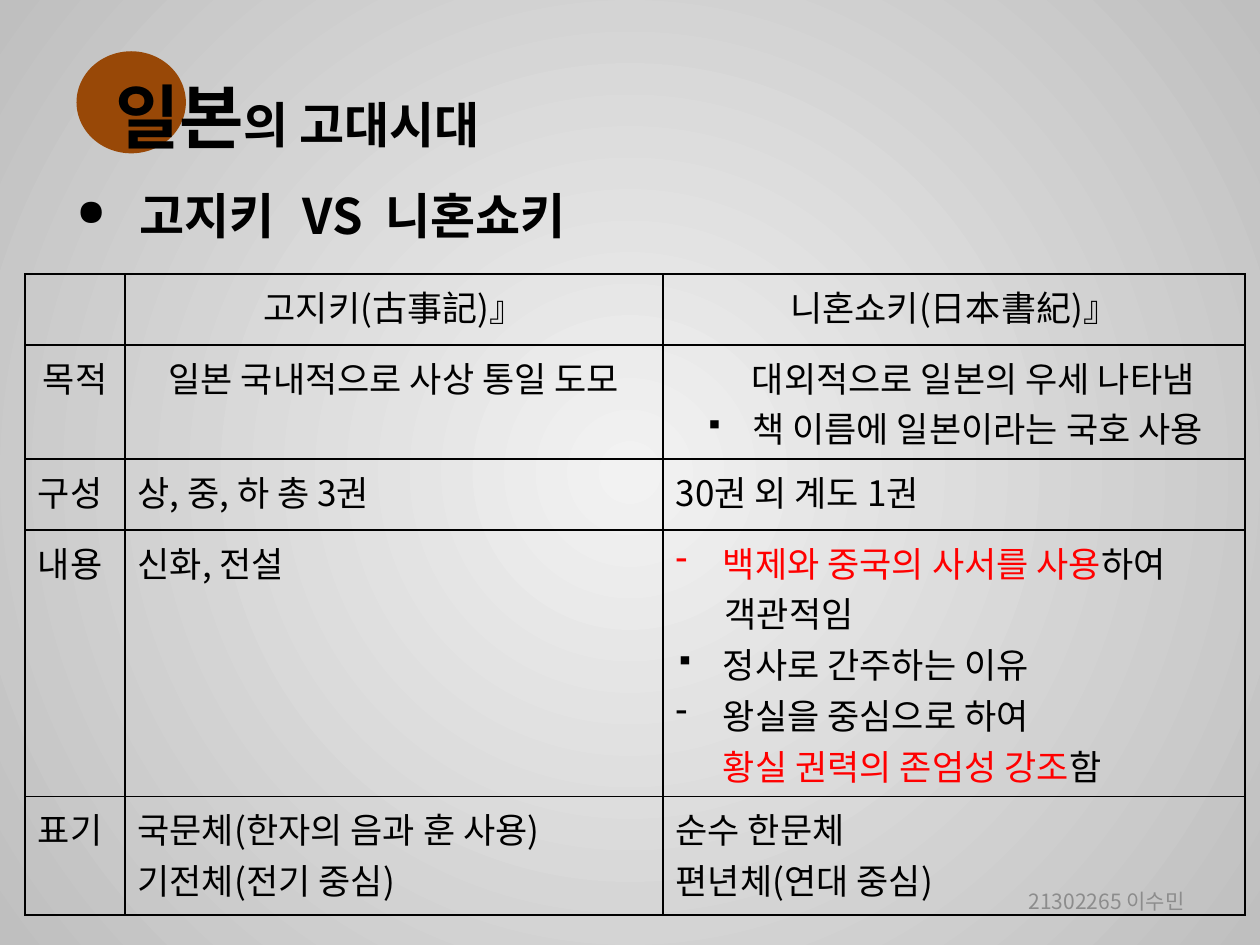
from dataclasses import dataclass

from pptx import Presentation
from pptx.dml.color import RGBColor
from pptx.enum.shapes import MSO_SHAPE
from pptx.enum.text import MSO_ANCHOR, PP_ALIGN
from pptx.oxml import parse_xml
from pptx.oxml.ns import nsdecls, qn
from pptx.util import Pt

FONT = "Noto Sans CJK KR"
BULLET_PERCENT = {"●": 75, "▪": 72, "-": 100}
COLORS = {
    "text": "000000",
    "accent": "FF0000",
    "footer": "8C8C8C",
    "circle": "984807",
    "border": "000000",
    "bg_center": "F2F2F2",
    "bg_edge": "BFBFBF",
}


@dataclass
class Run:
    text: str
    size: float = 20
    color: str = "text"
    bold: bool = False
    spacing: float = 0


@dataclass
class Para:
    runs: list[Run]
    align: PP_ALIGN = PP_ALIGN.LEFT
    bullet: str = ""
    indent: float = 0


def para(text: str, *, align=PP_ALIGN.LEFT, bullet="", indent=0, **fmt) -> Para:
    return Para([Run(text, **fmt)], align, bullet, indent)


def centered(text: str, **fmt) -> Para:
    return para(text, align=PP_ALIGN.CENTER, **fmt)


def rgb(name: str) -> RGBColor:
    return RGBColor.from_string(COLORS[name])


def add_run(p, run: Run) -> None:
    r = p.add_run()
    r.text = run.text
    r.font.name = FONT
    r.font.size = Pt(run.size)
    r.font.bold = run.bold
    r.font.color.rgb = rgb(run.color)
    rPr = r._r.get_or_add_rPr()
    rPr.append(parse_xml(f'<a:ea {nsdecls("a")} typeface="{FONT}"/>'))
    if run.spacing:
        rPr.set("spc", str(int(run.spacing * 100)))


def add_bullet(pPr, char: str, indent: float) -> None:
    pPr.set("indent", str(-Pt(indent)))
    percent = BULLET_PERCENT[char] * 1000
    pPr.append(parse_xml(f'<a:buSzPct {nsdecls("a")} val="{percent}"/>'))
    pPr.append(parse_xml(f'<a:buChar {nsdecls("a")} char="{char}"/>'))


def fill_text(tf, paras: list[Para]) -> None:
    for i, item in enumerate(paras):
        p = tf.add_paragraph() if i else tf.paragraphs[0]
        p.alignment = item.align
        pPr = p._p.get_or_add_pPr()
        if item.indent:
            pPr.set("marL", str(Pt(item.indent)))
        if item.bullet:
            add_bullet(pPr, item.bullet, item.indent)
        for run in item.runs:
            if run.text == "\n":
                p.add_line_break()
            else:
                add_run(p, run)


def add_text(s, left: float, top: float, width: float, height: float, item: Para) -> None:
    tf = s.shapes.add_textbox(Pt(left), Pt(top), Pt(width), Pt(height)).text_frame
    tf.word_wrap = True
    tf.vertical_anchor = MSO_ANCHOR.MIDDLE
    fill_text(tf, [item])


def set_borders(cell, width: float) -> None:
    tcPr = cell._tc.get_or_add_tcPr()
    for n, side in enumerate(("lnL", "lnR", "lnT", "lnB")):
        tcPr.insert(n, parse_xml(
            f'<a:{side} {nsdecls("a")} w="{Pt(width)}"><a:solidFill>'
            f'<a:srgbClr val="{COLORS["border"]}"/></a:solidFill></a:{side}>'))


def add_grid(s, left: float, top: float, cols: list[float], rows: list[float],
             cells: list[list[list[Para]]]) -> None:
    table = s.shapes.add_table(len(rows), len(cols), Pt(left), Pt(top),
                               Pt(sum(cols)), Pt(sum(rows))).table
    table.first_row = table.horz_banding = False
    for col, width in zip(table.columns, cols):
        col.width = Pt(width)
    for row, height, contents in zip(table.rows, rows, cells):
        row.height = Pt(height)
        for cell, paras in zip(row.cells, contents):
            cell.fill.background()
            set_borders(cell, 1)
            fill_text(cell.text_frame, paras)


def set_background(s) -> None:
    fill = s.background.fill
    fill.gradient()
    for stop, name in zip(fill.gradient_stops, ("bg_center", "bg_edge")):
        stop.color.rgb = rgb(name)
    grad = s._element.find(".//" + qn("a:gradFill"))
    grad.remove(grad.find(qn("a:lin")))
    grad.append(parse_xml(
        f'<a:path {nsdecls("a")} path="circle">'
        '<a:fillToRect l="50000" t="50000" r="50000" b="50000"/></a:path>'))


CELLS = [
    [[], [centered("고지키(古事記)』")], [centered("니혼쇼키(日本書紀)』")]],
    [[centered("목적")],
     [centered("일본 국내적으로 사상 통일 도모")],
     [centered("대외적으로 일본의 우세 나타냄", indent=22),
      centered("책 이름에 일본이라는 국호 사용", bullet="▪", indent=27)]],
    [[para("구성")], [para("상, 중, 하 총 3권")], [para("30권 외 계도 1권")]],
    [[para("내용")],
     [para("신화, 전설")],
     [Para([Run("백제와 중국의 사서를 사용", color="accent"), Run("하여")],
           bullet="-", indent=27),
      para("객관적임", indent=28),
      para("정사로 간주하는 이유", bullet="▪", indent=27),
      Para([Run("왕실을 중심으로 하여"), Run("\n"),
            Run("황실 권력의 존엄성 강조", color="accent"), Run("함")],
           bullet="-", indent=27)]],
    [[para("표기")],
     [para("국문체(한자의 음과 훈 사용)"), para("기전체(전기 중심)")],
     [para("순수 한문체"), para("편년체(연대 중심)")]],
]


def main() -> None:
    prs = Presentation()
    prs.slide_width, prs.slide_height = Pt(720), Pt(540)
    s = prs.slides.add_slide(prs.slide_layouts[6])
    set_background(s)

    # Circle behind the title
    sp = s.shapes.add_shape(MSO_SHAPE.OVAL, Pt(43.7), Pt(29.3), Pt(62.5), Pt(58.3))
    sp.shadow.inherit = False
    sp.fill.solid()
    sp.fill.fore_color.rgb = rgb("circle")
    sp.line.fill.background()

    # Title and subtitle
    add_text(s, 42.5, 31.7, 255, 69, Para(
        [Run("일본", 40, bold=True), Run("의 고대시대", 28, bold=True)], PP_ALIGN.CENTER))
    heading = [Run(text, 28, bold=True, spacing=spacing) for text, spacing in
               (("고지키", 0), (" ", 9.5), ("VS", 0), (" ", 7), ("니혼쇼키", 0))]
    add_text(s, 36.7, 88.6, 329, 68.4, Para(heading, bullet="●", indent=36))

    # Comparison table
    add_grid(s, 14.4, 156.7, [57, 307.5, 332.7], [40.5, 65.2, 40.5, 152.3, 67.7], CELLS)

    # Footer
    add_text(s, 516.2, 500.4, 167.8, 28.8, para(
        "21302265 이수민", align=PP_ALIGN.RIGHT, size=12, color="footer"))

    prs.save("out.pptx")


if __name__ == "__main__":
    main()
